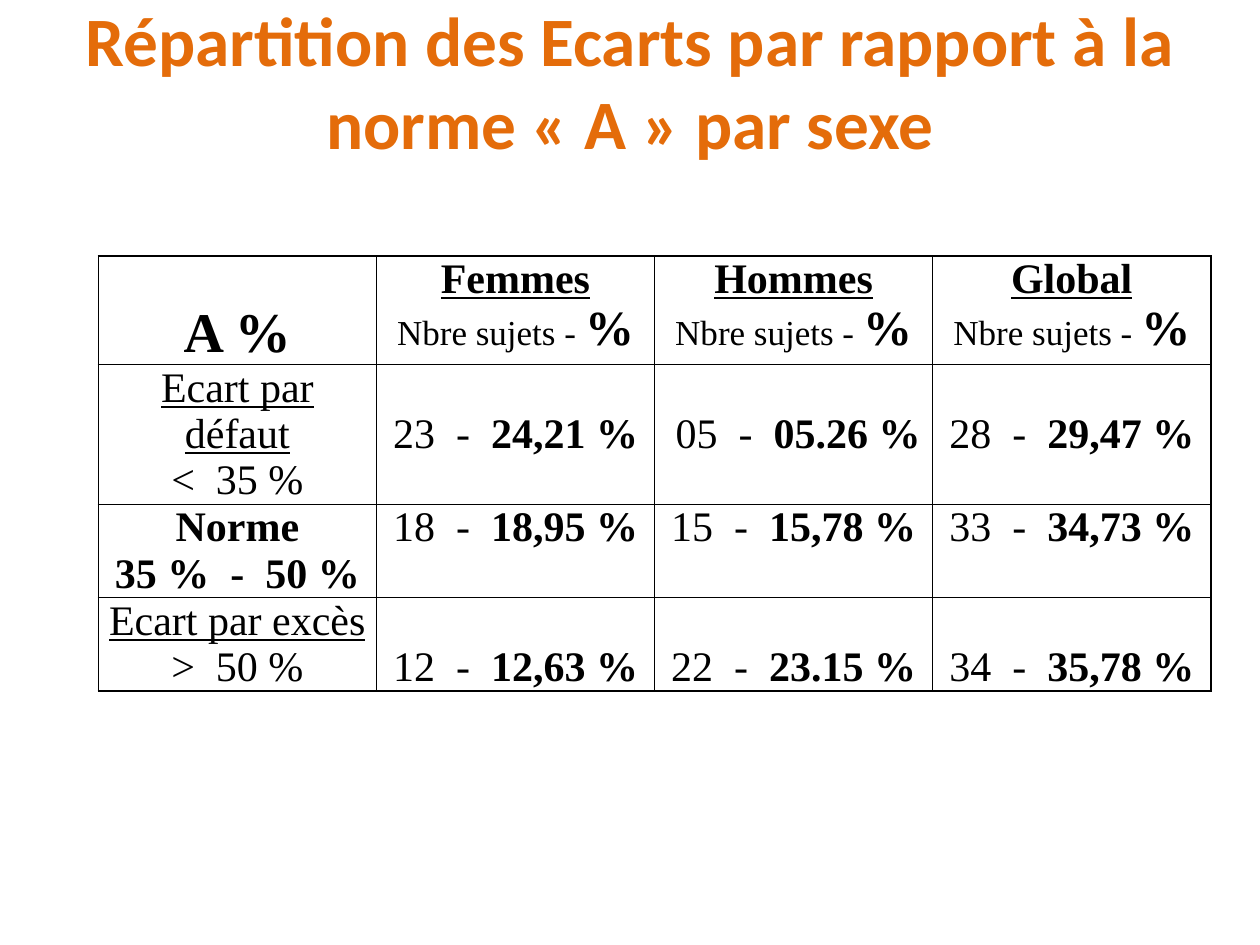
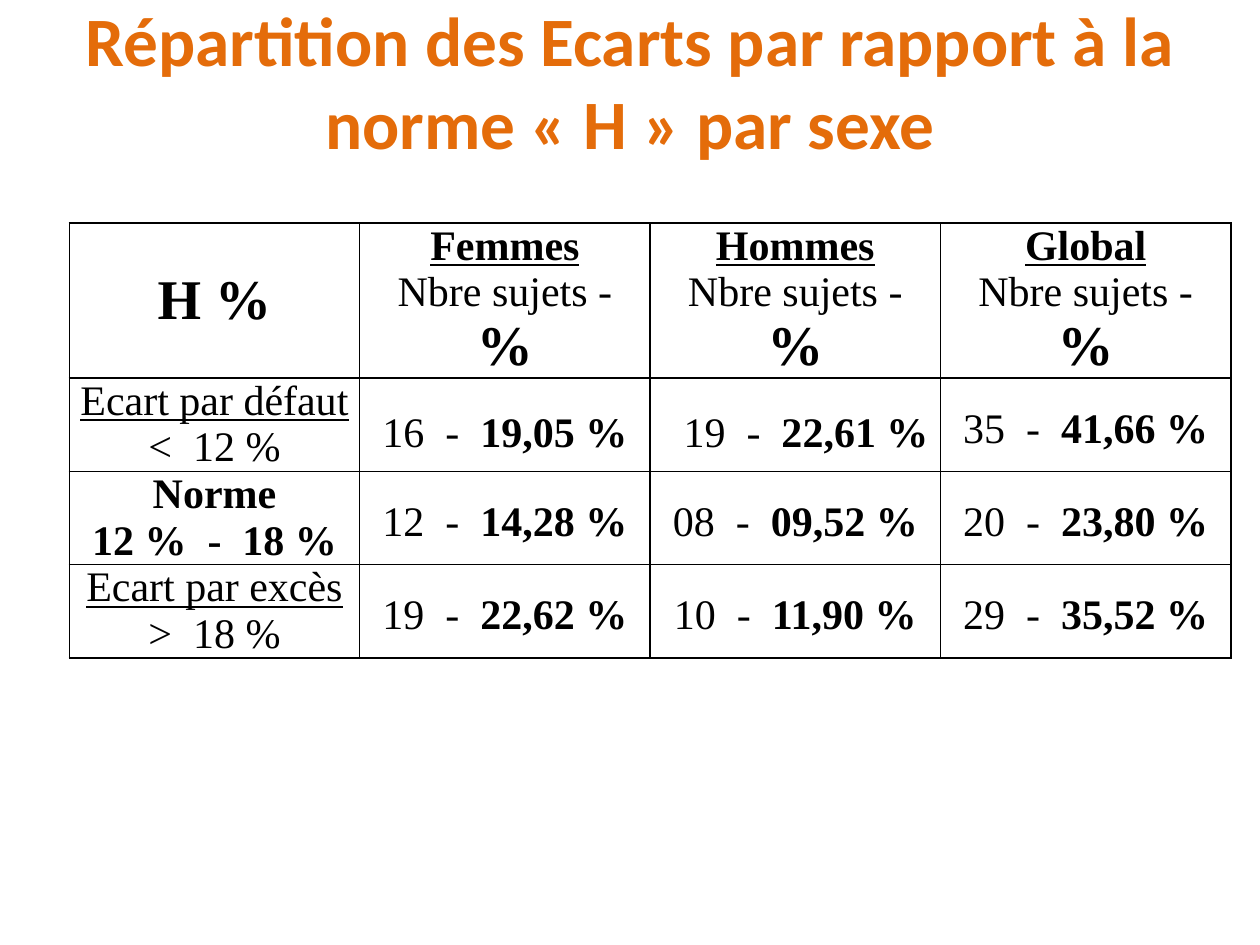
from dataclasses import dataclass

import pptx
import pptx.dml.color
import pptx.enum.text
import pptx.oxml
import pptx.oxml.ns
import pptx.util
from pptx.util import Inches

MSO_ANCHOR = pptx.enum.text.MSO_ANCHOR
PP_ALIGN = pptx.enum.text.PP_ALIGN


@dataclass(frozen=True)
class Theme:
    title_color: str = "E46C0A"
    ink: str = "000000"
    title_font: str = "Calibri"
    table_font: str = "Times New Roman"
    title_size: float = 39.6
    corner_size: float = 32
    body_size: float = 24
    border_pt: float = 1
    side_inset: float = 0.07


THEME = Theme()
GROUPS = ("Femmes", "Hommes", "Global")


@dataclass(frozen=True)
class Run:
    text: str
    size: float = THEME.body_size
    bold: bool = False
    underline: bool = False


@dataclass(frozen=True)
class Count:
    """A number of subjects and its share; drop and indent shift it in its cell."""
    subjects: str
    share: str
    drop: float = 0
    indent: float = 0


@dataclass(frozen=True)
class Band:
    label: str
    limits: str
    counts: tuple[Count, ...]
    is_norm: bool = False


@dataclass(frozen=True)
class NormSlide:
    norm: str
    left: float
    top: float
    width: float
    row_heights: tuple[float, ...]
    caption_size: float
    percent_size: float
    bands: tuple[Band, ...]


SLIDES = (
    NormSlide("A", 0.78, 2.03, 8.83, (0.86, 1.11, 0.74, 0.74), 20, 28, (
        Band("Ecart par défaut", "<  35 %", (
            Count("23", "24,21 %", 0.37),
            Count("05", "05.26 %", 0.37, 0.07),
            Count("28", "29,47 %", 0.37))),
        Band("Norme", "35 %  -  50 %", (
            Count("18", "18,95 %"),
            Count("15", "15,78 %"),
            Count("33", "34,73 %")), is_norm=True),
        Band("Ecart par excès", ">  50 %", (
            Count("12", "12,63 %", 0.37),
            Count("22", "23.15 %", 0.37),
            Count("34", "35,78 %", 0.37))),
    )),
    NormSlide("H", 0.55, 1.77, 9.22, (1.23, 0.74, 0.74, 0.74), 24, 32, (
        Band("Ecart par défaut", "<  12 %", (
            Count("16", "19,05 %", 0.25),
            Count("19", "22,61 %", 0.25, 0.17),
            Count("35", "41,66 %", 0.22))),
        Band("Norme", "12 %  -  18 %", (
            Count("12", "14,28 %", 0.22),
            Count("08", "09,52 %", 0.22),
            Count("20", "23,80 %", 0.22)), is_norm=True),
        Band("Ecart par excès", ">  18 %", (
            Count("19", "22,62 %", 0.22),
            Count("10", "11,90 %", 0.22),
            Count("29", "35,52 %", 0.22))),
    )),
)


def add_run(p, run: Run, font: str, color: str) -> None:
    r = p.add_run()
    r.text = run.text
    r.font.name = font
    r.font.size = pptx.util.Pt(run.size)
    r.font.bold = run.bold
    r.font.underline = run.underline
    r.font.color.rgb = pptx.dml.color.RGBColor.from_string(color)


def set_borders(cell) -> None:
    tc_pr = cell._tc.get_or_add_tcPr()
    width = int(pptx.util.Pt(THEME.border_pt))
    for position, side in enumerate(("lnL", "lnR", "lnT", "lnB")):
        tc_pr.insert(position, pptx.oxml.parse_xml(
            f'<a:{side} {pptx.oxml.ns.nsdecls("a")} w="{width}"><a:solidFill>'
            f'<a:srgbClr val="{THEME.ink}"/></a:solidFill></a:{side}>'))


def fill_cell(cell, lines: list[list[Run]], drop: float = 0, indent: float = 0) -> None:
    cell.margin_left = Inches(THEME.side_inset + indent)
    cell.margin_right = Inches(THEME.side_inset)
    cell.margin_top = Inches(drop)
    cell.margin_bottom = 0
    cell.vertical_anchor = MSO_ANCHOR.TOP
    cell.fill.background()
    set_borders(cell)
    tf = cell.text_frame
    for i, line in enumerate(lines):
        p = tf.paragraphs[0] if i == 0 else tf.add_paragraph()
        p.alignment = PP_ALIGN.CENTER
        for run in line:
            add_run(p, run, THEME.table_font, THEME.ink)


def add_title(s, norm: str) -> None:
    sp = s.shapes.title
    sp.left, sp.top, sp.width, sp.height = map(Inches, (0.5, 0.3, 9, 1.25))
    tf = sp.text_frame
    tf.auto_size = pptx.enum.text.MSO_AUTO_SIZE.NONE
    tf.word_wrap = True
    tf.vertical_anchor = MSO_ANCHOR.BOTTOM
    tf.margin_bottom = Inches(0.25)
    p = tf.paragraphs[0]
    p.alignment = PP_ALIGN.CENTER
    text = f"Répartition des Ecarts par rapport à la norme « {norm} » par sexe"
    add_run(p, Run(text, THEME.title_size, bold=True),
            THEME.title_font, THEME.title_color)


def add_norm_table(s, data: NormSlide) -> None:
    columns = len(GROUPS) + 1
    table = s.shapes.add_table(
        len(data.row_heights), columns, Inches(data.left), Inches(data.top),
        Inches(data.width), Inches(sum(data.row_heights))).table
    table.first_row = table.horz_banding = False
    for column in table.columns:
        column.width = Inches(data.width / columns)
    for row, height in zip(table.rows, data.row_heights):
        row.height = Inches(height)

    corner = Run(f"{data.norm} %", THEME.corner_size, bold=True)
    fill_cell(table.cell(0, 0), [[corner]], drop=0.37)
    for col, group in enumerate(GROUPS, start=1):
        fill_cell(table.cell(0, col), [
            [Run(group, bold=True, underline=True)],
            [Run("Nbre sujets - ", data.caption_size),
             Run("%", data.percent_size, bold=True)]])

    for row, band in enumerate(data.bands, start=1):
        fill_cell(table.cell(row, 0), [
            [Run(band.label, bold=band.is_norm, underline=not band.is_norm)],
            [Run(band.limits, bold=band.is_norm)]])
        for col, count in enumerate(band.counts, start=1):
            line = [Run(f"{count.subjects}  -  "), Run(count.share, bold=True)]
            fill_cell(table.cell(row, col), [line], count.drop, count.indent)


def main() -> None:
    prs = pptx.Presentation()
    prs.slide_width, prs.slide_height = Inches(10), Inches(7.5)
    title_only = prs.slide_layouts[5]
    for data in SLIDES:
        s = prs.slides.add_slide(title_only)
        add_title(s, data.norm)
        add_norm_table(s, data)
    prs.save("out.pptx")


if __name__ == "__main__":
    main()
